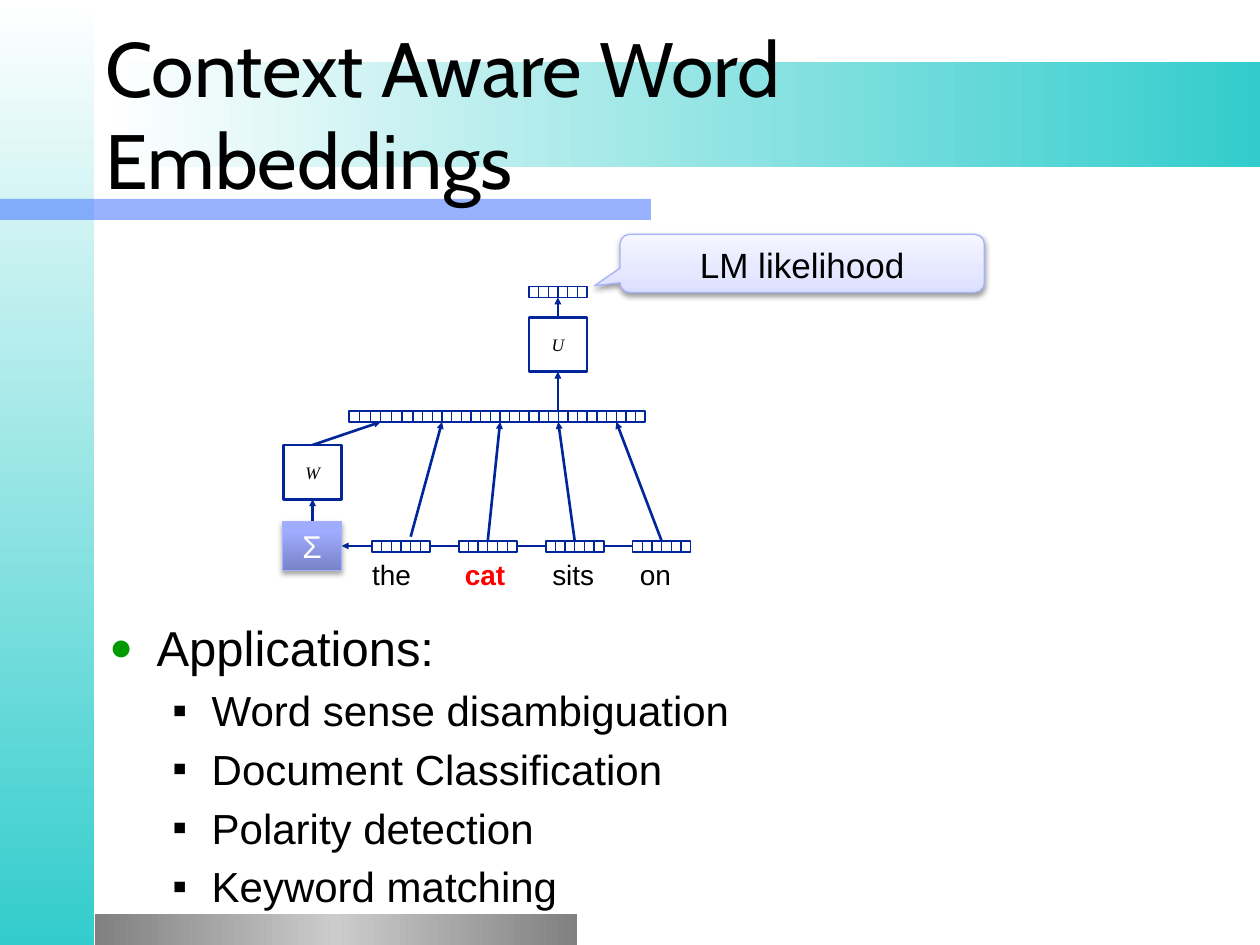
from dataclasses import dataclass

from lxml.etree import SubElement
from pptx import Presentation
from pptx.dml.color import RGBColor
from pptx.enum.shapes import MSO_CONNECTOR, MSO_SHAPE
from pptx.enum.text import MSO_ANCHOR, PP_ALIGN
from pptx.oxml.ns import qn
from pptx.util import Pt

NAVY, LAVENDER, WHITE, BLACK = "002699", "A7B2FB", "FFFFFF", "000000"
TURQUOISE = ((0, WHITE), (100, "33CCCC"))
VECTOR_WIDTH, VECTOR_HEIGHT, VECTOR_CELLS = 33.2, 6.3, 6
MATRIX_HEIGHT = 31
CONTEXT_TOP, WORD_TOP, OUTPUT_TOP = 234.8, 309, 163.7
SUM_LEFT, SUM_WIDTH = 161.3, 34


@dataclass
class Box:
    left: float
    top: float
    width: float
    height: float

    @property
    def center(self) -> float:
        return self.left + self.width / 2

    @property
    def bottom(self) -> float:
        return self.top + self.height

    def lengths(self) -> list:
        return [Pt(value) for value in (self.left, self.top, self.width, self.height)]


@dataclass
class Matrix:
    label: str
    box: Box


@dataclass
class Bullet:
    text: str
    size: float
    character: str
    margin: float
    hanging: float
    color: str = BLACK
    percent: int = 100


def color(value: str) -> RGBColor:
    return RGBColor.from_string(value)


def format_run(run, size: float, font: str = "Arial", value: str = BLACK,
               bold: bool = False, italic: bool = False) -> None:
    run.font.size, run.font.name = Pt(size), font
    run.font.bold, run.font.italic = bold, italic
    run.font.color.rgb = color(value)


def add_box(shapes, box: Box, fill: str, line: str | None = None,
            line_width: float = 1, kind=MSO_SHAPE.RECTANGLE):
    shape = shapes.add_shape(kind, *box.lengths())
    shape.shadow.inherit = False
    shape.fill.solid()
    shape.fill.fore_color.rgb = color(fill)
    if line:
        shape.line.color.rgb = color(line)
        shape.line.width = Pt(line_width)
    else:
        shape.line.fill.background()
    return shape


def set_gradient(shape, stops, angle: int) -> None:
    """Fill with (percent, colour) stops; the angle runs clockwise."""
    shape.fill.gradient()
    gradient = shape._element.spPr.find(qn("a:gradFill"))
    stop_list = gradient.find(qn("a:gsLst"))
    for stop in list(stop_list):
        stop_list.remove(stop)
    for percent, value in stops:
        stop = SubElement(stop_list, qn("a:gs"), pos=str(percent * 1000))
        SubElement(stop, qn("a:srgbClr"), val=value)
    gradient.find(qn("a:lin")).set("ang", str(angle * 60000))


def set_shadow(shape, opacity: int, distance: float) -> None:
    effects = shape._element.spPr.find(qn("a:effectLst"))
    shadow = SubElement(effects, qn("a:outerShdw"), blurRad=str(Pt(3.1)),
                        dist=str(Pt(distance)), dir="5400000", rotWithShape="0")
    black = SubElement(shadow, qn("a:srgbClr"), val=BLACK)
    SubElement(black, qn("a:alpha"), val=str(opacity * 1000))


def set_label(shape, text: str, size: float, anchor=MSO_ANCHOR.MIDDLE, **style) -> None:
    frame = shape.text_frame
    frame.text = text
    frame.vertical_anchor = anchor
    frame.paragraphs[0].alignment = PP_ALIGN.CENTER
    format_run(frame.paragraphs[0].runs[0], size, **style)


def add_line(shapes, start: tuple, end: tuple, width: float = 1.5, arrow: bool = True) -> None:
    points = [Pt(value) for value in (*start, *end)]
    connector = shapes.add_connector(MSO_CONNECTOR.STRAIGHT, *points)
    connector.line.color.rgb = color(NAVY)
    connector.line.width = Pt(width)
    if arrow:
        SubElement(connector.line._get_or_add_ln(), qn("a:tailEnd"),
                   type="triangle", w="sm", len="sm")
    SubElement(connector._element.spPr, qn("a:effectLst"))


def add_vector(shapes, box: Box) -> None:
    """A bar split into equal cells."""
    group = shapes.add_group_shape()
    add_box(group.shapes, box, WHITE, NAVY)
    for index in range(1, VECTOR_CELLS):
        x = box.left + index * box.width / VECTOR_CELLS
        add_line(group.shapes, (x, box.top), (x, box.bottom), 0.75, arrow=False)


def add_text_frame(shapes, box: Box):
    frame = shapes.add_textbox(*box.lengths()).text_frame
    frame.word_wrap = True
    return frame


def add_bullet(paragraph, bullet: Bullet) -> None:
    paragraph.text = bullet.text
    paragraph.space_before = Pt(bullet.size * 0.2)
    format_run(paragraph.runs[0], bullet.size)
    properties = paragraph._p.get_or_add_pPr()
    properties.set("marL", str(Pt(bullet.margin)))
    properties.set("indent", str(-Pt(bullet.hanging)))
    bullet_color = SubElement(properties, qn("a:buClr"))
    SubElement(bullet_color, qn("a:srgbClr"), val=bullet.color)
    SubElement(properties, qn("a:buSzPct"), val=str(bullet.percent * 1000))
    SubElement(properties, qn("a:buFont"), typeface="Arial")
    SubElement(properties, qn("a:buChar"), char=bullet.character)


def add_background(shapes) -> None:
    set_gradient(add_box(shapes, Box(0, 0, 54, 540), WHITE), TURQUOISE, 90)
    underline = add_box(shapes, Box(0, 113.7, 372, 12), "3366FF")
    fill_color = underline._element.spPr.find(qn("a:solidFill"))[0]
    SubElement(fill_color, qn("a:alpha"), val="50000")
    footer = add_box(shapes, Box(54, 522, 276, 18), WHITE)
    set_gradient(footer, ((0, "808080"), (50, "CCCCCC"), (100, "808080")), 0)
    set_gradient(add_box(shapes, Box(60.5, 35.3, 659.5, 60), WHITE), TURQUOISE, 0)


def add_words(shapes) -> None:
    frame = add_text_frame(shapes, Box(212.6, 318.6, 187, 19.4))
    frame.margin_left = frame.margin_right = frame.margin_top = frame.margin_bottom = 0
    paragraph = frame.paragraphs[0]
    for text, value, bold in (("the\t", BLACK, False), ("cat", "FF0000", True),
                              ("\tsits\ton", BLACK, False)):
        run = paragraph.add_run()
        run.text = text
        format_run(run, 16, value=value, bold=bold)
    tabs = SubElement(paragraph._p.get_or_add_pPr(), qn("a:tabLst"))
    for position in (53, 103, 153):
        SubElement(tabs, qn("a:tab"), pos=str(Pt(position)), algn="l")


def add_network(shapes) -> None:
    context = [Box(199.5, CONTEXT_TOP, 36.2, VECTOR_HEIGHT)]
    context += [Box(236 + index * VECTOR_WIDTH, CONTEXT_TOP, VECTOR_WIDTH, VECTOR_HEIGHT)
                for index in range(4)]
    words = [Box(212.5 + index * 49.65, WORD_TOP, VECTOR_WIDTH, VECTOR_HEIGHT)
             for index in range(4)]
    output = Box(302.2, OUTPUT_TOP, VECTOR_WIDTH, VECTOR_HEIGHT)
    output_matrix = Matrix("U", Box(302.2, 181.4, VECTOR_WIDTH, MATRIX_HEIGHT))
    sum_matrix = Matrix("W", Box(162, 254.3, VECTOR_WIDTH, MATRIX_HEIGHT))
    sum_box = Box(SUM_LEFT, 298, SUM_WIDTH, 28)

    upper, lower = output_matrix.box, sum_matrix.box
    add_line(shapes, (words[-1].left, 312), (SUM_LEFT + SUM_WIDTH, 312))
    starts = [(234.7, 306.7)] + [(word.center, word.top) for word in words[1:]]
    for start, target in zip(starts, context[1:]):
        add_line(shapes, start, (target.center, target.bottom))
    add_line(shapes, (lower.center, lower.top), (context[0].center, context[0].bottom))
    add_line(shapes, (lower.center, sum_box.top), (lower.center, lower.bottom))
    add_line(shapes, (upper.center, CONTEXT_TOP), (upper.center, upper.bottom))
    add_line(shapes, (upper.center, upper.top), (upper.center, output.bottom))
    for vector in (*context, *words, output):
        add_vector(shapes, vector)
    for matrix in (output_matrix, sum_matrix):
        shape = add_box(shapes, matrix.box, WHITE, NAVY, 1.5)
        set_label(shape, matrix.label, 10, font="Times New Roman", italic=True)

    sigma = add_box(shapes, sum_box, WHITE, LAVENDER, 0.75)
    set_gradient(sigma, ((0, "7883C7"), (80, "A0ACFF"), (100, "A2AEFF")), 270)
    set_shadow(sigma, 35, 1.8)
    set_label(sigma, "Σ", 18, value=WHITE)
    callout = add_box(shapes, Box(354.3, 133.9, 208.2, 33.2), WHITE, LAVENDER, 0.75,
                      MSO_SHAPE.ROUNDED_RECTANGULAR_CALLOUT)
    for index, value in enumerate((-0.57, 0.385, 0.167)):
        callout.adjustments[index] = value
    set_gradient(callout, ((0, "DBDFFF"), (35, "E5E8FF"), (100, "F5F6FF")), 270)
    set_shadow(callout, 38, 1.6)
    set_label(callout, "LM likelihood", 20, MSO_ANCHOR.TOP)


def main() -> None:
    presentation = Presentation()
    presentation.slide_width, presentation.slide_height = Pt(720), Pt(540)
    shapes = presentation.slides.add_slide(presentation.slide_layouts[6]).shapes
    add_background(shapes)
    title = add_text_frame(shapes, Box(53.3, 19.5, 612, 90))
    title.text = "Context Aware Word Embeddings"
    title.vertical_anchor = MSO_ANCHOR.MIDDLE
    format_run(title.paragraphs[0].runs[0], 44, "Cabin")
    body = add_text_frame(shapes, Box(55.4, 349.2, 612, 175.7))
    bullets = [Bullet("Applications:", 28, "●", 27, 27, "009900", 80)]
    bullets += [Bullet(text, 24, "▪", 58.5, 22.5) for text in (
        "Word sense disambiguation", "Document Classification",
        "Polarity detection", "Keyword matching")]
    for index, bullet in enumerate(bullets):
        add_bullet(body.add_paragraph() if index else body.paragraphs[0], bullet)
    add_network(shapes)
    add_words(shapes)
    presentation.save("out.pptx")


if __name__ == "__main__":
    main()
